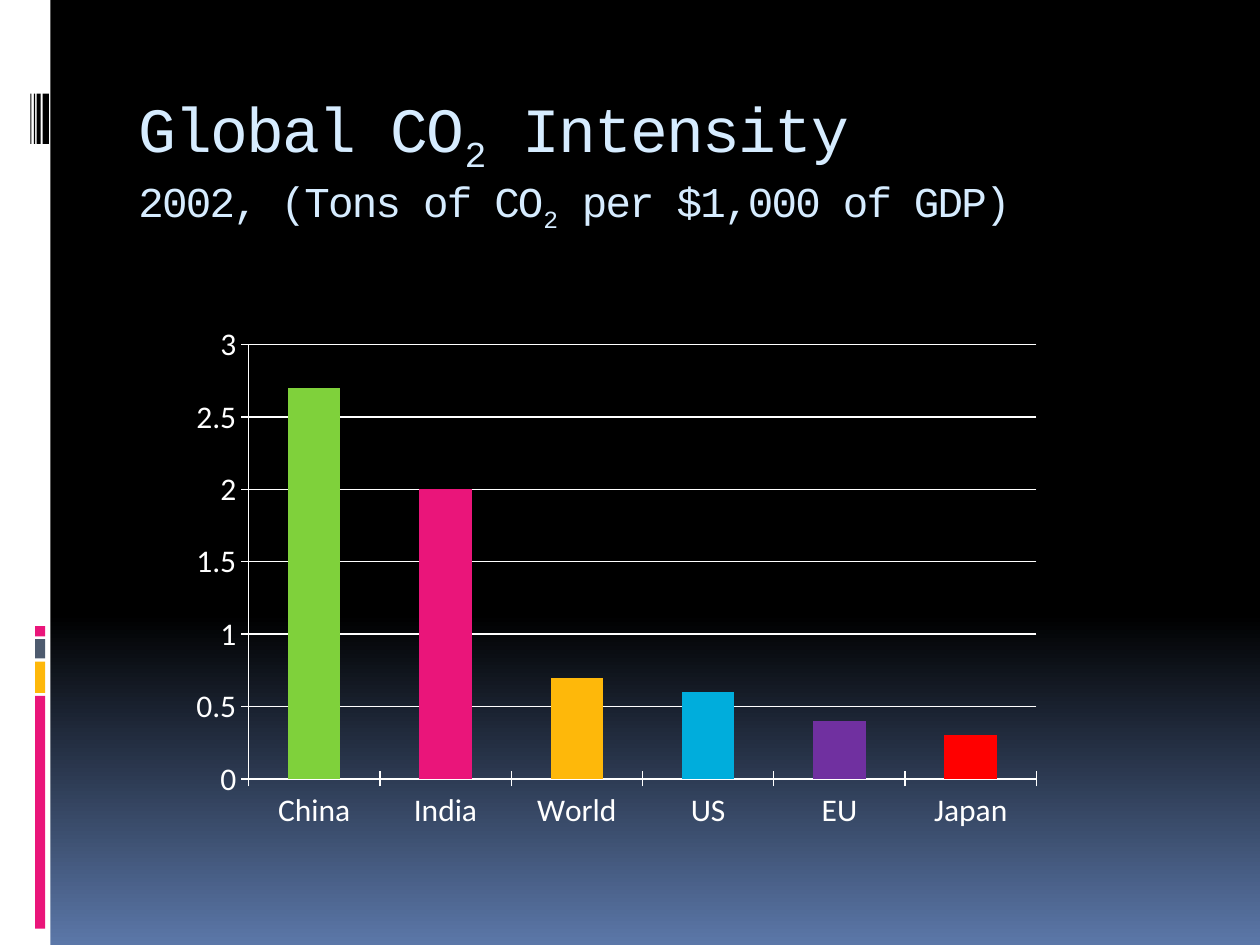
from copy import deepcopy
from dataclasses import dataclass

from pptx import Presentation
from pptx.chart.data import CategoryChartData
from pptx.dml.color import RGBColor
from pptx.enum.chart import XL_CHART_TYPE, XL_TICK_MARK
from pptx.enum.shapes import MSO_SHAPE
from pptx.enum.text import MSO_ANCHOR
from pptx.util import Pt

RECTANGLE = MSO_SHAPE.RECTANGLE
COLUMNS = XL_CHART_TYPE.COLUMN_CLUSTERED
CROSS = XL_TICK_MARK.CROSS
TOP = MSO_ANCHOR.TOP


@dataclass(frozen=True)
class Theme:
    black: str = "000000"
    white: str = "FFFFFF"
    dusk: str = "5B77A8"
    pale: str = "D6ECFF"
    pink: str = "EA157A"
    amber: str = "FEB80A"
    slate: str = "4E5B6F"
    green: str = "7FD13B"
    cyan: str = "00ADDC"
    purple: str = "7030A0"
    red: str = "FF0000"
    title_font: str = "Courier New"
    chart_font: str = "Calibri"
    title_size: float = 36
    subtitle_size: float = 24.3
    chart_size: float = 10
    axis_size: float = 18


def add_text(paragraph, text, *, size, color, font, spacing=0, baseline=0):
    run = paragraph.add_run()
    run.text = text
    run.font.size = Pt(size)
    run.font.name = font
    run.font.color.rgb = RGBColor.from_string(color)
    properties = run._r.get_or_add_rPr()
    properties.set("spc", str(spacing * 100))
    properties.set("baseline", str(baseline * 1000))


class SlideBuilder:
    """Draws styled elements on one slide, with lengths in points."""

    def __init__(self, slide, theme):
        self.slide = slide
        self.theme = theme

    def background(self, stops):
        fill = self.slide.background.fill
        fill.gradient()
        fill.gradient_angle = 270
        stop_list = self.slide.element.xpath(".//a:gsLst")[0]
        stop_list.append(deepcopy(stop_list[-1]))
        for stop, (position, color) in zip(fill.gradient_stops, stops):
            stop.position = position
            stop.color.rgb = RGBColor.from_string(color)

    def bar(self, left, top, width, height, color):
        bar = self.slide.shapes.add_shape(
            RECTANGLE, Pt(left), Pt(top), Pt(width), Pt(height))
        bar.shadow.inherit = False
        bar.fill.solid()
        bar.fill.fore_color.rgb = RGBColor.from_string(color)
        bar.line.fill.background()

    def title(self, left, top, width, height, lines):
        frame = self.slide.shapes.add_textbox(
            Pt(left), Pt(top), Pt(width), Pt(height)).text_frame
        frame.word_wrap = True
        frame.vertical_anchor = TOP
        frame.margin_top = Pt(10.6)
        paragraph = frame.paragraphs[0]
        for number, (size, parts) in enumerate(lines):
            if number:
                paragraph.add_line_break()
            for text, baseline in parts:
                add_text(paragraph, text, size=size, color=self.theme.pale,
                         font=self.theme.title_font, spacing=-1, baseline=baseline)

    def column_chart(self, left, top, width, height, series_name, columns):
        theme = self.theme
        white = RGBColor.from_string(theme.white)
        chart_data = CategoryChartData()
        chart_data.categories = [name for name, _, _ in columns]
        chart_data.add_series(series_name, [value for _, value, _ in columns])
        chart = self.slide.shapes.add_chart(
            COLUMNS, Pt(left), Pt(top), Pt(width), Pt(height), chart_data).chart
        chart.has_title = False
        chart.has_legend = False
        chart.font.name = theme.chart_font
        chart.font.size = Pt(theme.chart_size)
        chart.font.color.rgb = white

        plot = chart.plots[0]
        plot.vary_by_categories = False
        plot.gap_width = 150
        for index, (_, _, color) in enumerate(columns):
            fill = plot.series[0].points[index].format.fill
            fill.solid()
            fill.fore_color.rgb = RGBColor.from_string(color)

        values = chart.value_axis
        values.minimum_scale, values.maximum_scale, values.major_unit = 0, 3, 0.5
        values.has_major_gridlines = True
        for axis in (chart.category_axis, values):
            axis.major_tick_mark = CROSS
            axis.tick_labels.font.size = Pt(theme.axis_size)
            axis.tick_labels.font.name = theme.chart_font
            axis.tick_labels.font.color.rgb = white
        for line in (chart.category_axis.format.line, values.format.line,
                     values.major_gridlines.format.line):
            line.width = Pt(0.75)
            line.color.rgb = white


def main():
    theme = Theme()
    deck = Presentation()
    deck.slide_width, deck.slide_height = Pt(720), Pt(540)
    builder = SlideBuilder(deck.slides.add_slide(deck.slide_layouts[6]), theme)

    builder.background([(0, theme.black), (0.65, theme.black), (1, theme.dusk)])
    builder.bar(0, 0, 28.8, 540, theme.white)

    block_top, block_gap = 357.8, 1.7
    for height, color in ((5.8, theme.pink), (11, theme.slate),
                          (18, theme.amber), (133, theme.pink)):
        builder.bar(20, block_top, 5.8, height, color)
        block_top += height + block_gap

    for left, width in ((17.4, 0.6), (19.4, 0.7), (21, 2.2), (24.4, 3.6)):
        builder.bar(left, 53.5, width, 28.8, theme.black)

    builder.title(72, 40.3, 612, 72, [
        (theme.title_size, [("Global CO", 0), ("2", -25), (" Intensity", 0)]),
        (theme.subtitle_size, [("2002, (Tons of CO", 0), ("2", -25),
                               (" per $1,000 of GDP)", 0)]),
    ])

    builder.column_chart(102.2, 180, 500, 300, "Series 1", [
        ("China", 2.7, theme.green),
        ("India", 2, theme.pink),
        ("World", 0.7, theme.amber),
        ("US", 0.6, theme.cyan),
        ("EU", 0.4, theme.purple),
        ("Japan", 0.3, theme.red),
    ])

    deck.save("out.pptx")


if __name__ == "__main__":
    main()
